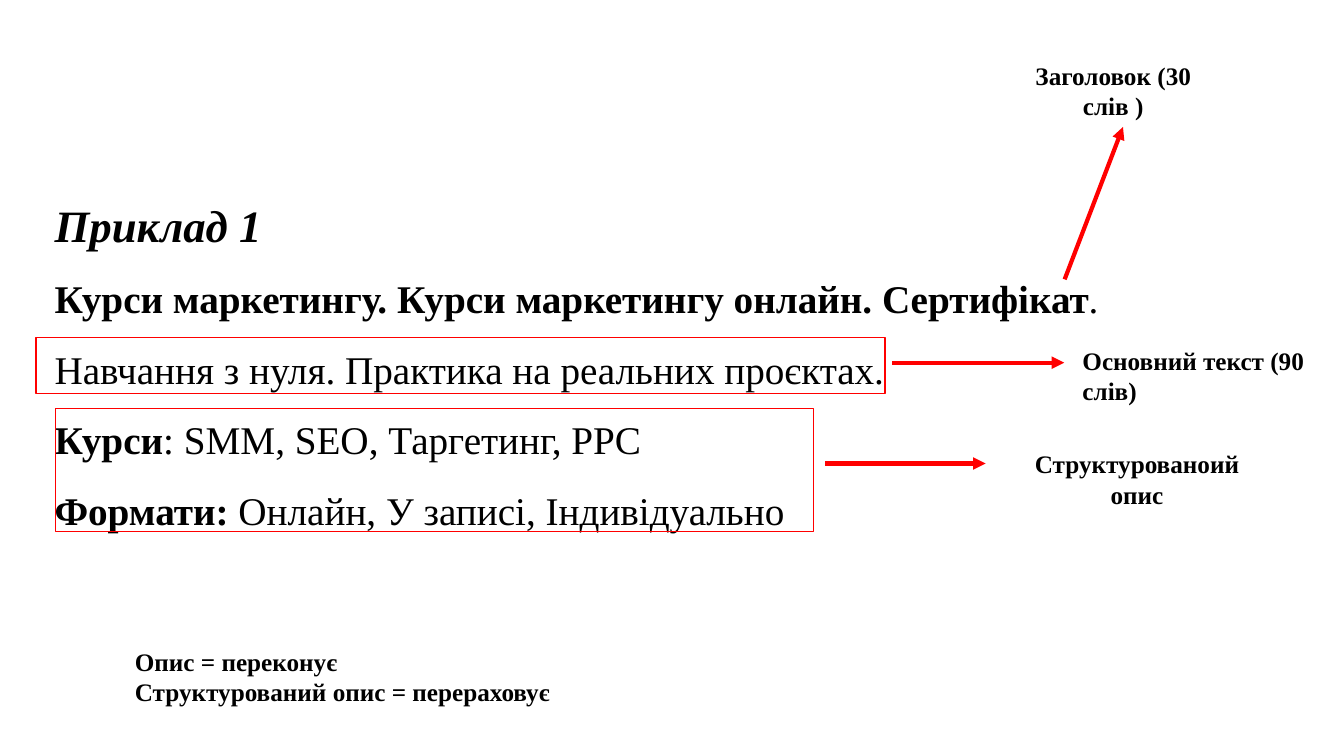
import pptx
import pptx.dml.color
import pptx.enum.shapes
import pptx.enum.text
import pptx.oxml.ns
import pptx.util
from lxml import etree

Cm = pptx.util.Cm
Align = pptx.enum.text.PP_ALIGN
RED = pptx.dml.color.RGBColor(0xFF, 0x00, 0x00)
BLACK = pptx.dml.color.RGBColor(0x00, 0x00, 0x00)
FONT = "Times New Roman"
LABEL_H = 1.8


def place(shape, box):
    shape.left, shape.top, shape.width, shape.height = map(Cm, box)


def write(shape, lines, size=18, italic=False, align=Align.LEFT, space=1.0):
    """Fill a shape with lines, each a list of (text, bold) runs."""
    frame = shape.text_frame
    frame.word_wrap = True
    frame.auto_size = pptx.enum.text.MSO_AUTO_SIZE.NONE
    frame.vertical_anchor = pptx.enum.text.MSO_ANCHOR.TOP
    for i, line in enumerate(lines):
        para = frame.paragraphs[0] if i == 0 else frame.add_paragraph()
        props = para._p.get_or_add_pPr()
        props.set("marL", "0")
        props.set("indent", "0")
        etree.SubElement(props, pptx.oxml.ns.qn("a:buNone"))
        para.alignment = align
        para.line_spacing = space
        para.space_before = pptx.util.Pt(0)
        for text, bold in line:
            run = para.add_run()
            run.text = text
            font = run.font
            font.name, font.size = FONT, pptx.util.Pt(size)
            font.bold, font.italic = bold, italic
            font.color.rgb = BLACK


def label(slide, box, texts, align=Align.LEFT):
    shape = slide.shapes.add_textbox(*map(Cm, box))
    write(shape, [[(text, True)] for text in texts], align=align)


def arrow(slide, start, end):
    line = slide.shapes.add_connector(
        pptx.enum.shapes.MSO_CONNECTOR.STRAIGHT, *map(Cm, start + end))
    line.line.color.rgb = RED
    line.line.width = pptx.util.Pt(3)
    tip = etree.SubElement(line.line._get_or_add_ln(),
                           pptx.oxml.ns.qn("a:tailEnd"))
    tip.set("type", "triangle")
    etree.SubElement(line._element.spPr, pptx.oxml.ns.qn("a:effectLst"))


def frame(slide, box):
    shape = slide.shapes.add_shape(
        pptx.enum.shapes.MSO_SHAPE.RECTANGLE, *map(Cm, box))
    shape.shadow.inherit = False
    shape.fill.background()
    shape.line.color.rgb = RED
    shape.line.width = pptx.util.Pt(1)


def sample(slide, box):
    """Place the heading above the text of the advert."""
    left, top, width, height = box
    head = 2.0
    title, body = slide.placeholders
    place(title, (left, top, width, head))
    write(title, [[("Приклад 1", True)]], size=32, italic=True,
          align=Align.JUSTIFY, space=1.5)
    place(body, (left, top + head, width, height - head))
    write(body, [
        [("Курси маркетингу. Курси маркетингу онлайн. Сертифікат", True),
         (".", False)],
        [("Навчання з нуля. Практика на реальних проєктах.", False)],
        [("Курси", True), (": SMM, SEO, Таргетинг, PPC", False)],
        [("Формати: ", True), ("Онлайн, У записі, Індивідуально", False)],
    ], size=28, align=Align.JUSTIFY, space=1.5)


def header(slide, box):
    """Label the heading, with an arrow rising to the label."""
    left, top, width, height = box
    label(slide, (left, top, width, LABEL_H), ["Заголовок (30 слів )"],
          Align.CENTER)
    arrow(slide, (left + 1.3, top + height), (left + 2.77, top + LABEL_H))


def callout(slide, box, text, gap, reach, drop, side, rise,
            align=Align.LEFT):
    """Frame a box and point from its right to a label.

    gap, reach, drop: arrow start, length and depth from the frame;
    side: left edge and width of the label; rise: its depth.
    """
    left, top, width, height = box
    frame(slide, box)
    right = left + width
    start = right + gap
    arrow(slide, (start, top + drop), (start + reach, top + drop))
    shift, wide = side
    label(slide, (right + shift, top + rise, wide, LABEL_H), [text], align)


def main():
    deck = pptx.Presentation()
    deck.slide_width, deck.slide_height = Cm(33.87), Cm(19.05)
    slide = deck.slides.add_slide(deck.slide_layouts[1])
    sample(slide, (1.12, 4.19, 29.77, 9.27))
    header(slide, (25.53, 1.4, 5.05, 5.64))
    callout(slide, (0.91, 8.51, 21.39, 1.4), "Основний текст (90 слів)",
            gap=0.18, reach=4.34, drop=0.63, side=(4.73, 6.38), rise=0.07)
    callout(slide, (1.4, 10.29, 19.1, 3.1), "Структурованоий опис",
            gap=0.3, reach=4.04, drop=1.39, side=(4.8, 6.71), rise=0.89,
            align=Align.CENTER)
    label(slide, (3.15, 16.15, 16.94, LABEL_H),
          ["Опис = переконує", "Структурований опис = перераховує"])
    deck.save("out.pptx")


if __name__ == "__main__":
    main()
